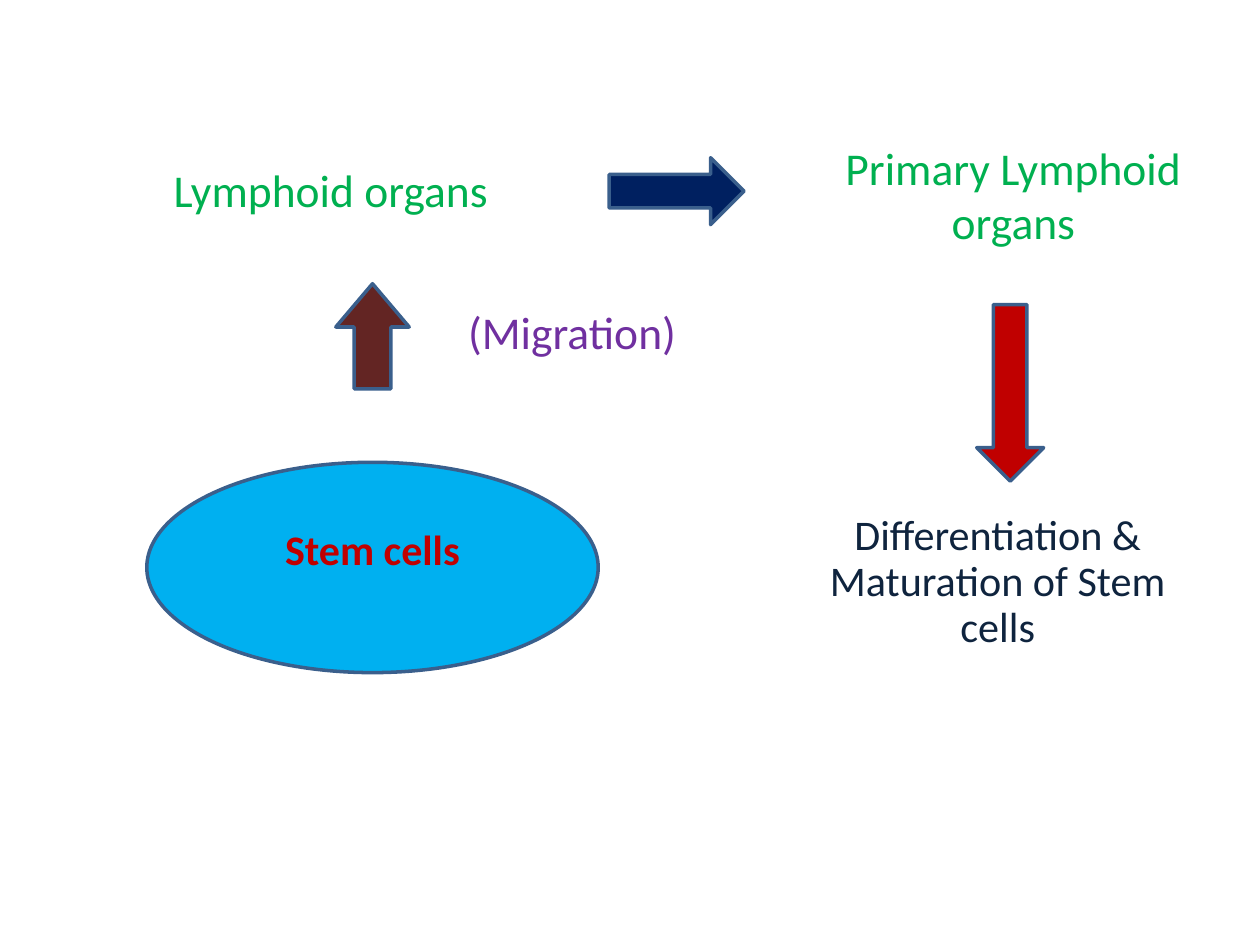
import pptx
import pptx.dml.color
import pptx.enum.shapes
import pptx.enum.text
import pptx.util

Cm = pptx.util.Cm
Pt = pptx.util.Pt
RGBColor = pptx.dml.color.RGBColor
Shape = pptx.enum.shapes.MSO_SHAPE

SKY = RGBColor(0x00, 0xB0, 0xF0)
OUTLINE = RGBColor(0x3A, 0x5F, 0x8C)
RED = RGBColor(0xC0, 0x00, 0x00)
NAVY = RGBColor(0x00, 0x20, 0x60)
BROWN = RGBColor(0x63, 0x25, 0x23)
GREEN = RGBColor(0x00, 0xB0, 0x50)
PURPLE = RGBColor(0x70, 0x30, 0xA0)
INK = RGBColor(0x0F, 0x24, 0x3E)


def place(origin, area):
    """Turn an area relative to origin into slide lengths; all are in cm."""
    left, top, width, height = area
    return Cm(origin[0] + left), Cm(origin[1] + top), Cm(width), Cm(height)


def write(shape, lines, size, color, bold=False, spacing=None):
    frame = shape.text_frame
    frame.word_wrap = True
    frame.vertical_anchor = pptx.enum.text.MSO_ANCHOR.MIDDLE
    for index, line in enumerate(lines):
        para = frame.add_paragraph() if index else frame.paragraphs[0]
        para.alignment = pptx.enum.text.PP_ALIGN.CENTER
        if spacing:
            para.line_spacing = spacing
        span = para.add_run()
        span.text = line
        span.font.name = "Calibri"
        span.font.size = Pt(size)
        span.font.bold = bold
        span.font.color.rgb = color


def add_label(page, origin, area, lines, color, size=26, spacing=None):
    box = page.shapes.add_textbox(*place(origin, area))
    write(box, lines, size, color, spacing=spacing)


def add_outlined(page, kind, origin, area, fill):
    shape = page.shapes.add_shape(kind, *place(origin, area))
    shape.shadow.inherit = False
    shape.fill.solid()
    shape.fill.fore_color.rgb = fill
    shape.line.color.rgb = OUTLINE
    shape.line.width = Pt(2)
    return shape


def add_migration(page, origin):
    """Left column: stem cells move up to the lymphoid organs."""
    stem_cells = add_outlined(page, Shape.OVAL, origin, (0.42, 6.57, 9.1, 4.24), SKY)
    write(stem_cells, ["Stem cells"], 24, RED, bold=True)
    stem_cells.text_frame.paragraphs[0].add_line_break()
    arrow = add_outlined(page, Shape.UP_ARROW, origin, (4.23, 2.97, 1.48, 2.12), BROWN)
    arrow.adjustments[1] = 0.59
    add_label(page, origin, (0, 0, 8.26, 2.12), ["Lymphoid organs"], GREEN)
    add_label(page, origin, (6.35, 3.18, 5.29, 1.48), ["(Migration)"], PURPLE)


def add_maturation(page, origin):
    """Right column: primary organs lead down to differentiation."""
    add_label(page, origin, (0.21, 0, 8.68, 2.75), ["Primary Lymphoid organs"], GREEN)
    add_outlined(page, Shape.DOWN_ARROW, origin, (3.81, 3.6, 1.35, 3.56), RED)
    add_label(page, origin, (0, 7.62, 8.47, 3.18),
              ["Differentiation &", "Maturation of Stem cells"], INK, 24.1, 0.9)


def main():
    deck = pptx.Presentation()
    deck.slide_width, deck.slide_height = Cm(25.4), Cm(19.05)
    page = deck.slides.add_slide(deck.slide_layouts[6])
    add_migration(page, (2.54, 2.75))
    add_outlined(page, Shape.RIGHT_ARROW, (12.28, 3.18), (0, 0, 2.72, 1.35), NAVY)
    add_maturation(page, (15.88, 2.54))
    deck.save("out.pptx")


if __name__ == "__main__":
    main()
